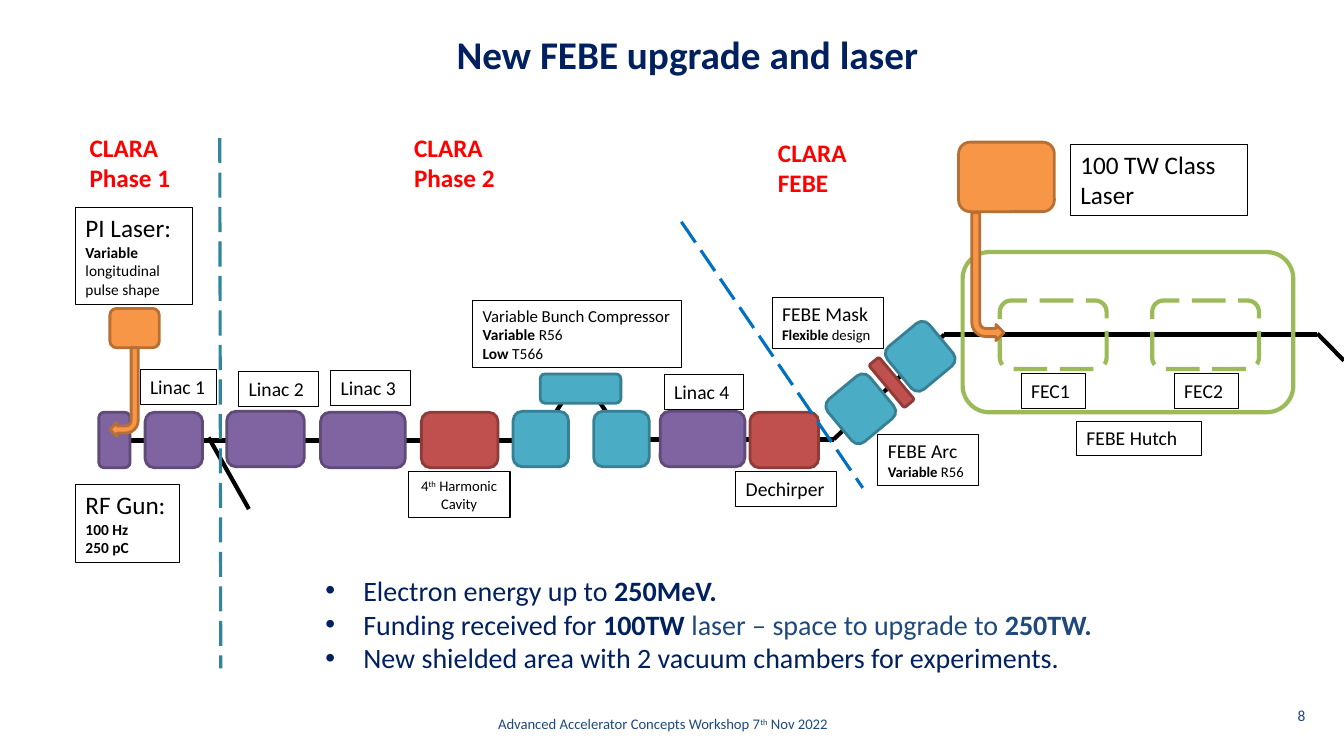
"""Build the FEBE upgrade and laser beamline slide."""
from dataclasses import dataclass
from typing import Optional

from lxml.etree import SubElement
from pptx import Presentation
from pptx.dml.color import RGBColor
from pptx.enum.dml import MSO_LINE
from pptx.enum.shapes import MSO_CONNECTOR, MSO_SHAPE
from pptx.enum.text import MSO_ANCHOR, MSO_AUTO_SIZE, PP_ALIGN
from pptx.oxml.ns import qn
from pptx.util import Pt

COLORS = {
    "black": "000000", "navy": "002060", "slate": "1F497D", "heading": "FF0000",
    "purple": "8064A2", "purple_edge": "5F4A78", "red": "C0504D", "red_edge": "8E3B39",
    "teal": "4BACC6", "teal_edge": "377F92", "orange": "F79646", "orange_edge": "B76F34",
    "green": "9BBB59", "phase": "31859C", "febe": "0070C0",
}
FONT = "Calibri"
CAVITY_H = 39.6
ROW_H = 24.5


@dataclass
class Run:
    text: str
    size: float = 14
    bold: bool = False
    color: str = "black"
    sup: bool = False


@dataclass
class Label:
    x: float
    y: float
    w: float
    h: float
    paras: list[list[Run]]
    align: PP_ALIGN = PP_ALIGN.LEFT
    boxed: bool = True
    anchor: MSO_ANCHOR = MSO_ANCHOR.TOP
    bullet: bool = False


@dataclass
class Block:
    x: float
    y: float
    w: float
    h: float = CAVITY_H
    fill: Optional[str] = None
    rot: float = 0
    dashed: bool = False
    kind: MSO_SHAPE = MSO_SHAPE.ROUNDED_RECTANGLE
    flip: bool = False


@dataclass
class Line:
    x1: float
    y1: float
    x2: float
    y2: float
    color: str = "black"
    width: float = 3
    dashed: bool = False


def rgb(name: str) -> RGBColor:
    return RGBColor.from_string(COLORS[name])


def write(tf, paras: list[list[Run]], align: PP_ALIGN, bullet: bool = False) -> None:
    for i, runs in enumerate(paras):
        p = tf.add_paragraph() if i else tf.paragraphs[0]
        p.alignment = align
        if bullet:
            pPr = p._p.get_or_add_pPr()
            pPr.set("marL", str(Pt(27)))
            pPr.set("indent", str(-Pt(27)))
            SubElement(pPr, qn("a:buFont")).set("typeface", "Arial")
            SubElement(pPr, qn("a:buChar")).set("char", "•")
        for run in runs:
            r = p.add_run()
            r.text = run.text
            r.font.name, r.font.size, r.font.bold = FONT, Pt(run.size), run.bold
            r.font.color.rgb = rgb(run.color)
            if run.sup:
                r._r.get_or_add_rPr().set("baseline", "30000")


def draw_label(s, lb: Label) -> None:
    sp = s.shapes.add_textbox(Pt(lb.x), Pt(lb.y), Pt(lb.w), Pt(lb.h))
    if lb.boxed:
        sp.line.color.rgb, sp.line.width = rgb("black"), Pt(0.75)
    tf = sp.text_frame
    tf.word_wrap, tf.vertical_anchor = True, lb.anchor
    write(tf, lb.paras, lb.align, lb.bullet)


def draw_block(s, b: Block) -> None:
    sp = s.shapes.add_shape(b.kind, Pt(b.x), Pt(b.y), Pt(b.w), Pt(b.h))
    sp.shadow.inherit = False
    sp.rotation = b.rot
    if b.flip:
        sp._element.spPr.xfrm.set("flipH", "1")
    if b.fill:
        sp.fill.solid()
        sp.fill.fore_color.rgb = rgb(b.fill)
    else:
        sp.fill.background()
    sp.line.color.rgb = rgb(f"{b.fill}_edge" if b.fill else "green")
    sp.line.width = Pt(2 if b.fill else 3)
    if b.dashed:
        sp.line.dash_style = MSO_LINE.LONG_DASH


def draw_line(s, ln: Line) -> None:
    c = s.shapes.add_connector(MSO_CONNECTOR.STRAIGHT, Pt(ln.x1), Pt(ln.y1), Pt(ln.x2), Pt(ln.y2))
    c.line.color.rgb, c.line.width = rgb(ln.color), Pt(ln.width)
    if ln.dashed:
        c.line.dash_style = MSO_LINE.LONG_DASH
    SubElement(c._element.spPr, qn("a:effectLst"))


def small(bold: str, plain: str, size: float = 11) -> list[Run]:
    return [Run(bold, size, True), Run(plain, size)]


def navy(text: str, bold: bool = False, color: str = "navy") -> Run:
    return Run(text, 20, bold, color)


BEAMLINE = [
    Line(70.6, 314.6, 385.9, 314.6), Line(384.5, 313.9, 403.9, 283.7),
    Line(445.7, 313.2, 425.5, 283), Line(444.2, 313.9, 595.4, 313.9),
    Line(595.4, 313.9, 674.6, 239), Line(674.6, 239, 941, 239),
    Line(941, 238.3, 960, 257.6), Line(149, 312.5, 177.8, 363.6),
]
BOUNDARIES = [
    Line(486.7, 158.4, 616.3, 348.5, "febe", 2.25, True),
    Line(157, 98.6, 157.7, 477.4, "phase", 2.25, True),
]
BLOCKS = [
    Block(70.6, 294.5, 22.3, fill="purple"), Block(103.7, 294.5, 41, fill="purple"),
    Block(162, 293.8, 55.4, fill="purple"), Block(229, 294.5, 60.5, fill="purple"),
    Block(301, 294.5, 54.7, fill="red"), Block(366.5, 293.8, 39.6, fill="teal"),
    Block(385.9, 267.1, 57.6, 20.9, "teal"), Block(424.1, 293.8, 39.6, fill="teal"),
    Block(471.6, 293.8, 60.5, fill="purple"), Block(687.6, 180, 236.2, 114.5),
    Block(535.7, 294.5, 49, fill="red"), Block(595.4, 272.2, 38.9, fill="teal", rot=320.3),
    Block(632.2, 253.4, 9.4, fill="red", rot=320.1),
    Block(637.9, 234.7, 38.9, fill="teal", rot=320.3),
    Block(714.2, 214.6, 76.3, 49, dashed=True), Block(823, 214.6, 76.3, 49, dashed=True),
    Block(78.5, 220.3, 35.3, 28.1, "orange"),
    Block(78.5, 248.4, 20.2, 63.4, "orange", 180, kind=MSO_SHAPE.BENT_ARROW),
    Block(694.1, 151.9, 23, 91.4, "orange", 180, kind=MSO_SHAPE.BENT_ARROW, flip=True),
    Block(684.7, 101.5, 68.4, 49.7, "orange"),
]
NAMES = [
    ("Linac 1", 100.1, 264.2, 54.7), ("Linac 2", 170.6, 265.7, 56.9),
    ("Linac 3", 236.2, 265, 56.9), ("Linac 4", 474.5, 267.8, 56.9),
    ("Dechirper", 525.6, 337, 72), ("FEBE Hutch", 769, 301, 89.3),
    ("FEC1", 729.4, 267.1, 46.1), ("FEC2", 838.8, 267.1, 46.1),
]
HEADINGS = [("Phase 1", 56.9, 90.7), ("Phase 2", 288.7, 90.7), ("FEBE", 548.6, 94.3)]
LABELS = [
    *[Label(x, y, w, ROW_H, [[Run(name)]]) for name, x, y, w in NAMES],
    *[Label(x, y, 85, 51.1, [[Run(t, 18, True, "heading")] for t in ("CLARA", name)], boxed=False)
      for name, x, y in HEADINGS],
    Label(54, 148.3, 83.5, 69.1,
          [[Run("PI Laser:", 18)], small("Variable", " longitudinal pulse shape")]),
    Label(337.7, 214.6, 149, 48.2, [[Run("Variable Bunch Compressor", 12)],
                                    small("Variable", " R56"), small("Low", " T566")]),
    Label(291.6, 337, 72.7, 32.4,
          [[Run("4", 10.5), Run("th", 10.5, sup=True), Run(" Harmonic", 10.5)],
           [Run("Cavity", 10.5)]], PP_ALIGN.CENTER),
    Label(627.1, 310.3, 72, 36.7, [[Run("FEBE Arc")], small("Variable", " R56", 10.5)]),
    Label(551.5, 212.4, 79.9, 36.7, [[Run("FEBE Mask")], small("Flexible", " design", 10.5)]),
    Label(764.6, 103, 126.7, 51.1, [[Run("100 TW Class Laser", 18)]]),
    Label(54, 346.3, 74.2, 55.4,
          [[Run("RF Gun:", 18)], [Run("100 Hz", 11, True)], [Run("250 pC", 11, True)]]),
    Label(225.4, 406.1, 666.7, 79.9, [
        [navy("Electron energy up to "), navy("250MeV.", True)],
        [navy("Funding received for "), navy("100TW ", True),
         navy("laser – space to upgrade to ", color="slate"), navy("250TW.", True, "slate")],
        [navy("New shielded area with 2 vacuum chambers for experiments.")],
    ], boxed=False, bullet=True),
    Label(232.6, 502.6, 481.7, 28.8,
          [[Run("Advanced Accelerator Concepts Workshop 7", 10.5, color="slate"),
            Run("th", 10.5, color="slate", sup=True), Run(" Nov 2022", 10.5, color="slate")]],
          PP_ALIGN.CENTER, False, MSO_ANCHOR.MIDDLE),
    Label(900.7, 496.8, 38.9, 28.8, [[Run("8", 11, color="slate")]],
          PP_ALIGN.RIGHT, False, MSO_ANCHOR.MIDDLE),
]


def main() -> None:
    prs = Presentation()
    prs.slide_width, prs.slide_height = Pt(960), Pt(540)
    s = prs.slides.add_slide(prs.slide_layouts[5])
    sp = s.shapes.title
    sp.left, sp.top, sp.width, sp.height = Pt(319), Pt(18), Pt(347.8), Pt(41)
    tf = sp.text_frame
    tf.word_wrap, tf.auto_size, tf.vertical_anchor = False, MSO_AUTO_SIZE.NONE, MSO_ANCHOR.TOP
    write(tf, [[Run("New FEBE upgrade and laser", 28, True, "navy")]], PP_ALIGN.LEFT)
    for draw, items in ((draw_line, BEAMLINE), (draw_block, BLOCKS),
                        (draw_label, LABELS), (draw_line, BOUNDARIES)):
        for item in items:
            draw(s, item)
    prs.save("out.pptx")


if __name__ == "__main__":
    main()
